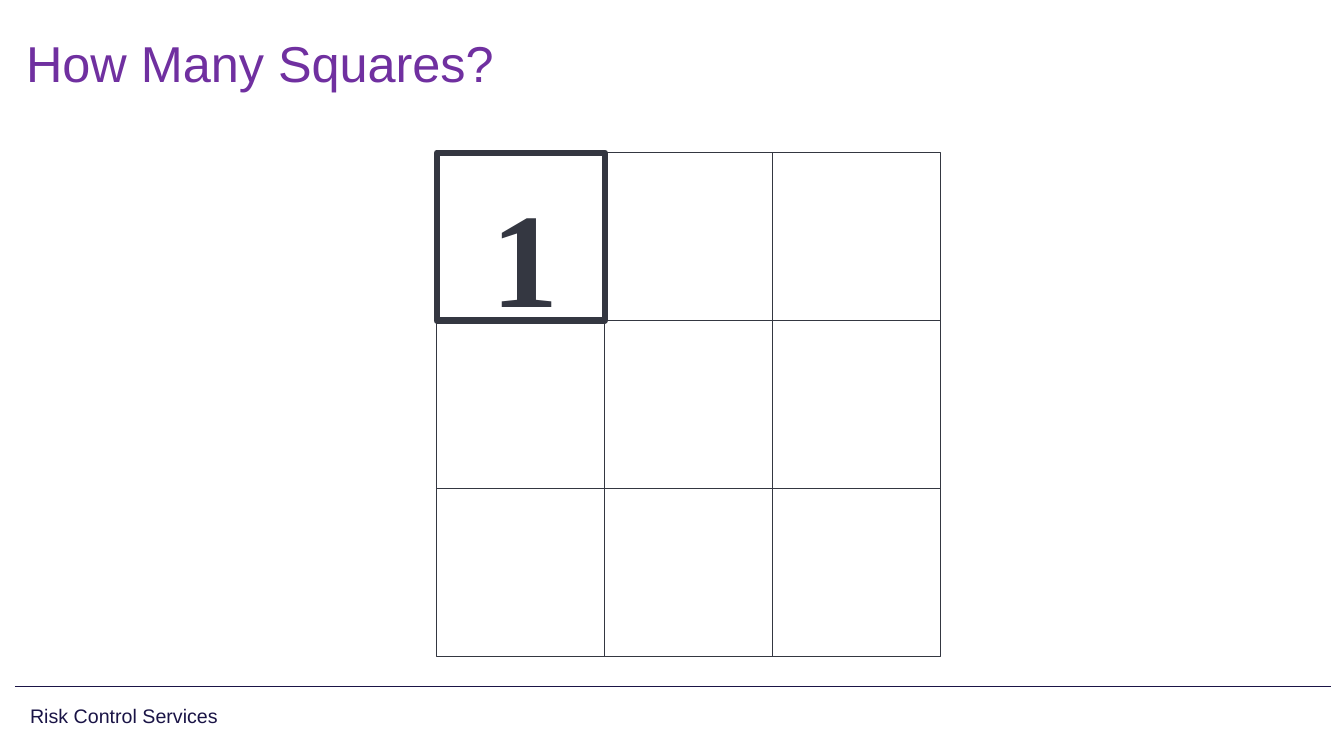
from itertools import product

from lxml import etree
from pptx import Presentation
from pptx.dml.color import RGBColor
from pptx.enum.shapes import MSO_CONNECTOR, MSO_SHAPE
from pptx.enum.text import MSO_ANCHOR, PP_ALIGN
from pptx.oxml.ns import qn
from pptx.util import Inches, Pt

RECT = MSO_SHAPE.RECTANGLE
LINE = MSO_CONNECTOR.STRAIGHT
TOP, MIDDLE = MSO_ANCHOR.TOP, MSO_ANCHOR.MIDDLE
LEFT, CENTER = PP_ALIGN.LEFT, PP_ALIGN.CENTER


class Board:
    """Draws styled elements on one slide, placed by shares of its size."""

    colors = {"title": "7030A0", "navy": "1A1446", "ink": "343741"}

    def __init__(self, deck):
        self.wide, self.high = deck.slide_width, deck.slide_height
        self.shapes = deck.slides.add_slide(deck.slide_layouts[6]).shapes

    def place(self, x, y, w, h):
        return (round(x * self.wide), round(y * self.high),
                round(w * self.wide), round(h * self.high))

    def color(self, name):
        return RGBColor.from_string(self.colors[name])

    def stroke(self, item, name, width):
        item.line.color.rgb = self.color(name)
        item.line.width = Pt(width)

    def square(self, area, name, width):
        shape = self.shapes.add_shape(RECT, *self.place(*area))
        shape.shadow.inherit = False
        shape.fill.background()
        self.stroke(shape, name, width)

    def rule(self, start, end, y, name, width):
        left, top, right, base = self.place(start, y, end, y)
        line = self.shapes.add_connector(LINE, left, top, right, base)
        etree.SubElement(line._element.spPr, qn("a:effectLst"))
        self.stroke(line, name, width)

    def text(self, area, words, name, size, face="Arial", bold=False,
             align=LEFT, anchor=MIDDLE, space=0.9, inset=0.05):
        frame = self.shapes.add_textbox(*self.place(*area)).text_frame
        frame.word_wrap = True
        frame.vertical_anchor = anchor
        frame.margin_top = Inches(inset)
        frame.text = words
        para = frame.paragraphs[0]
        para.alignment = align
        para.line_spacing = space
        font = para.runs[0].font
        font.name, font.size, font.bold = face, Pt(size), bold
        font.color.rgb = self.color(name)


def main():
    deck = Presentation()
    deck.slide_width, deck.slide_height = Inches(13.33), Inches(7.5)
    board = Board(deck)

    board.text((0.015, 0.921, 0.328, 0.056), "Risk Control Services", "navy", 14)
    board.rule(0.011, 0.99, 0.908, "navy", 1)
    board.text((0.012, 0.033, 0.845, 0.109), "How Many Squares?", "title", 36)

    left, top, wide, high = 0.325, 0.202, 1 / 8, 2 / 9
    for row, col in product(range(3), repeat=2):
        area = (left + col * wide, top + row * high, wide, high)
        board.square(area, "ink", 0.75 if row or col else 4.5)

    board.text((0.332, 0.203, 0.118, 0.227), "1", "ink", 96, "Times New Roman",
               bold=True, align=CENTER, anchor=TOP, space=1.0, inset=0.2)
    deck.save("out.pptx")


if __name__ == "__main__":
    main()
